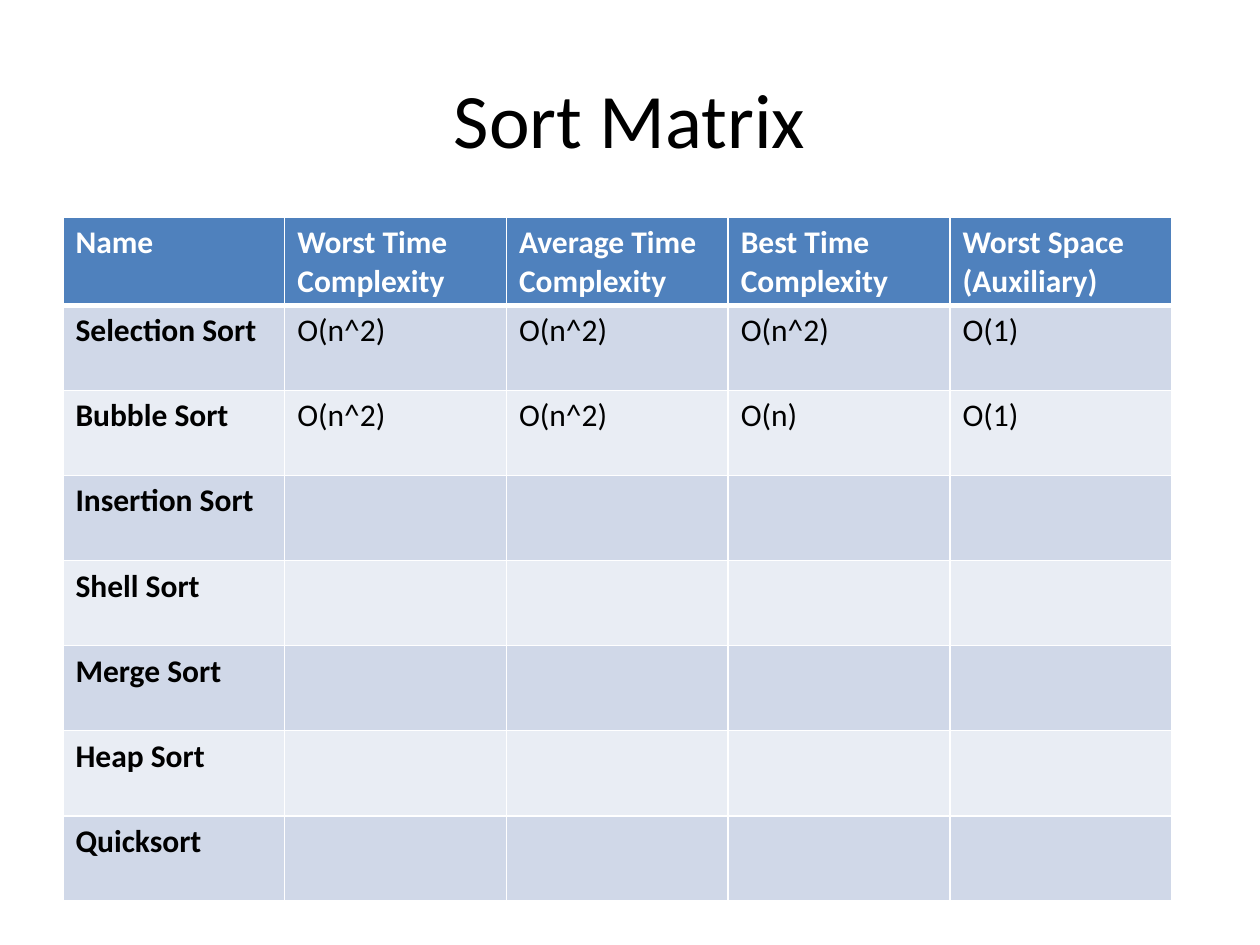
from lxml.etree import SubElement as Sub
from pptx import Presentation
from pptx.dml.color import RGBColor
from pptx.enum.text import MSO_ANCHOR as Anchor, PP_ALIGN as Align
from pptx.oxml.ns import qn
from pptx.util import Inches, Pt

WHITE = RGBColor(0xFF, 0xFF, 0xFF)
BLACK = RGBColor(0, 0, 0)
BLUE = RGBColor(0x4F, 0x81, 0xBD)
BANDS = RGBColor(0xE9, 0xED, 0xF4), RGBColor(0xD0, 0xD8, 0xE8)

WIDE, HIGH = Inches(10), Inches(7.5)
TITLE_BOX = 0.05, 0.04, 0.9, 0.17
TABLE_BOX = 0.05, 0.23, 0.88, 0.72

HEADS = ["Name", "Worst Time Complexity", "Average Time Complexity",
         "Best Time Complexity", "Worst Space (Auxiliary)"]
SORTS = [
    ["Selection Sort", "O(n^2)", "O(n^2)", "O(n^2)", "O(1)"],
    ["Bubble Sort", "O(n^2)", "O(n^2)", "O(n)", "O(1)"],
    ["Insertion Sort"],
    ["Shell Sort"],
    ["Merge Sort"],
    ["Heap Sort"],
    ["Quicksort"],
]


def place(box):
    left, top, width, height = box
    return (round(left * WIDE), round(top * HIGH),
            round(width * WIDE), round(height * HIGH))


def style(para, size, color, bold=False):
    font = para.font
    font.name, font.size, font.bold = "Calibri", Pt(size), bold
    font.color.rgb = color


def edge(cell, top, base):
    props = cell._tc.get_or_add_tcPr()
    for side, width in zip("LRTB", (1, 1, top, base)):
        line = Sub(props, qn(f"a:ln{side}"), w=str(Pt(width)))
        fill = Sub(line, qn("a:solidFill"))
        Sub(fill, qn("a:srgbClr"), val=str(WHITE))


def add_title(slide, box, text):
    frame = slide.shapes.add_textbox(*place(box)).text_frame
    frame.word_wrap = True
    frame.vertical_anchor = Anchor.MIDDLE
    para = frame.paragraphs[0]
    para.text = text
    para.alignment = Align.CENTER
    style(para, 44, BLACK)


def add_matrix(slide, box, heads, sorts):
    rows = [heads] + sorts
    table = slide.shapes.add_table(len(rows), len(heads), *place(box)).table
    for r, words in enumerate(rows):
        for c in range(len(heads)):
            cell = table.cell(r, c)
            edge(cell, 3 if r == 1 else 1, 3 if r == 0 else 1)
            cell.fill.solid()
            cell.fill.fore_color.rgb = BANDS[r % 2] if r else BLUE
            para = cell.text_frame.paragraphs[0]
            if c < len(words):
                para.text = words[c]
            style(para, 18, BLACK if r else WHITE, r == 0 or c == 0)


def main():
    deck = Presentation()
    deck.slide_width, deck.slide_height = WIDE, HIGH
    slide = deck.slides.add_slide(deck.slide_layouts[6])
    add_title(slide, TITLE_BOX, "Sort Matrix")
    add_matrix(slide, TABLE_BOX, HEADS, SORTS)
    deck.save("out.pptx")


if __name__ == "__main__":
    main()
